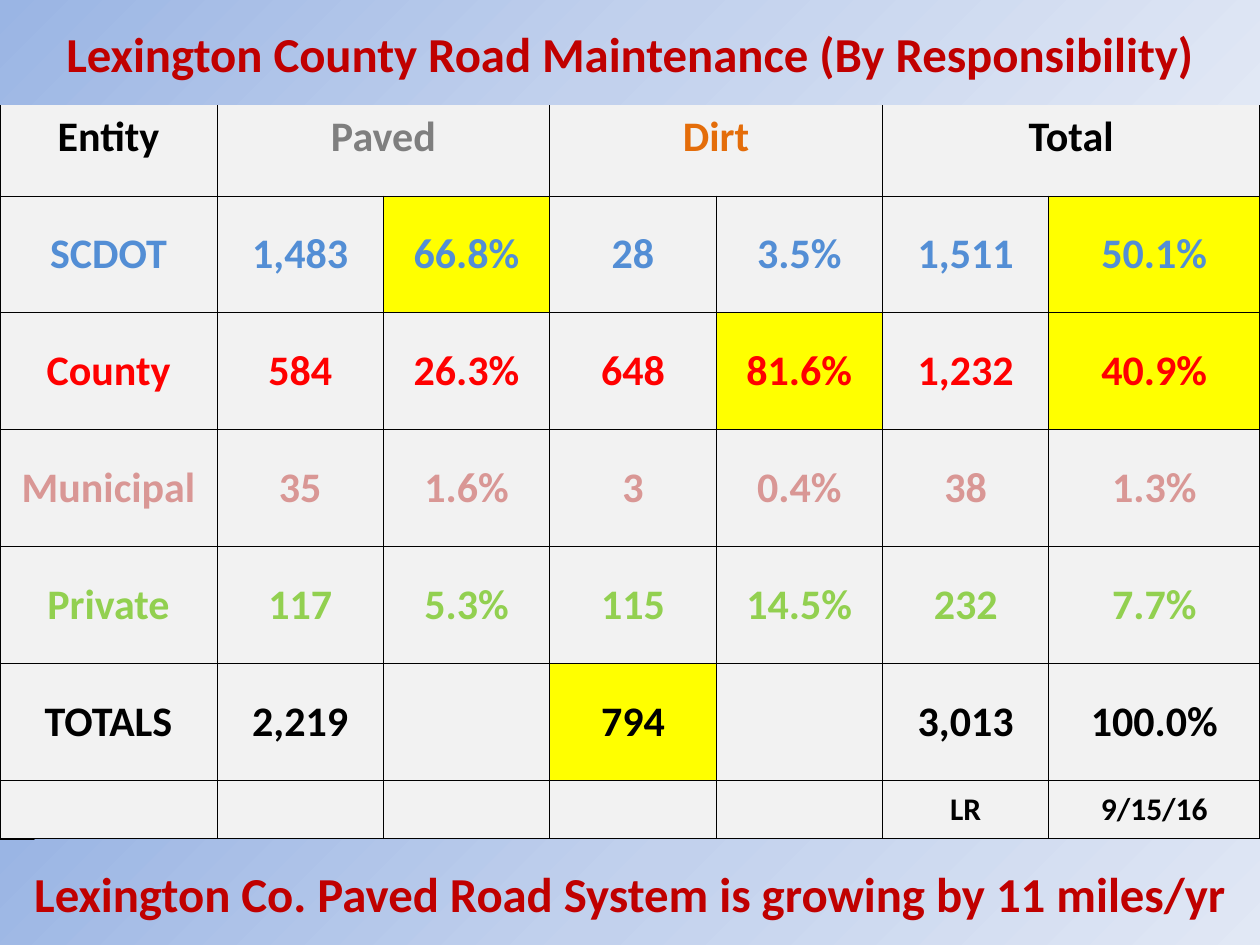
from dataclasses import dataclass

from lxml import etree
from pptx import Presentation
from pptx.dml.color import RGBColor
from pptx.enum.shapes import MSO_SHAPE
from pptx.enum.text import MSO_ANCHOR, PP_ALIGN
from pptx.oxml import parse_xml
from pptx.oxml.ns import qn
from pptx.slide import Slide
from pptx.table import _Cell
from pptx.text.text import TextFrame
from pptx.util import Pt

CENTER = PP_ALIGN.CENTER
MIDDLE = MSO_ANCHOR.MIDDLE
RECTANGLE = MSO_SHAPE.RECTANGLE
DRAWING_NS = "http://schemas.openxmlformats.org/drawingml/2006/main"


@dataclass(frozen=True)
class Theme:
    font: str = "Calibri"
    banner_size: float = 27.9
    table_size: float = 24
    credit_size: float = 18
    banner_text: str = "C00000"
    banner_stops: tuple[str, ...] = ("9AB5E4", "C2D1ED", "E1E8F5")
    cell: str = "F2F2F2"
    highlight: str = "FFFF00"
    black: str = "000000"
    paved: str = "7F7F7F"
    dirt: str = "E46D0A"
    state: str = "538ED5"
    county: str = "FF0000"
    municipal: str = "D99795"
    private: str = "92D050"
    inner_border: float = 0.5
    outer_border: float = 1


THEME = Theme()


@dataclass(frozen=True)
class Banner:
    text: str
    top: float


@dataclass(frozen=True)
class RoadRow:
    values: tuple[str, ...]
    color: str
    highlighted: tuple[int, ...] = ()
    size: float = THEME.table_size


SLIDE_WIDTH, SLIDE_HEIGHT = 720, 540
BANNER_HEIGHT = 60
BANNERS = (
    Banner("Lexington County Road Maintenance (By Responsibility)", 0),
    Banner("Lexington Co. Paved Road System is growing by 11 miles/yr",
           SLIDE_HEIGHT - BANNER_HEIGHT),
)

TABLE_TOP = 45.2
COLUMN_WIDTHS = [124] + [95.1] * 5 + [120.5]
ROW_HEIGHTS = [66.8] * 6 + [33.6]
HEADINGS = (
    (0, "Entity", THEME.black),
    (1, "Paved", THEME.paved),
    (3, "Dirt", THEME.dirt),
    (5, "Total", THEME.black),
)
ROAD_ROWS = (
    RoadRow(("SCDOT", "1,483", "66.8%", "28", "3.5%", "1,511", "50.1%"), THEME.state, (2, 6)),
    RoadRow(("County", "584", "26.3%", "648", "81.6%", "1,232", "40.9%"), THEME.county, (4, 6)),
    RoadRow(("Municipal", "35", "1.6%", "3", "0.4%", "38", "1.3%"), THEME.municipal),
    RoadRow(("Private", "117", "5.3%", "115", "14.5%", "232", "7.7%"), THEME.private),
    RoadRow(("TOTALS", "2,219", "", "794", "", "3,013", "100.0%"), THEME.black, (3,)),
    RoadRow(("", "", "", "", "", "LR", "9/15/16"), THEME.black, size=THEME.credit_size),
)


def write_centered(frame: TextFrame, text: str, size: float, color: str) -> None:
    frame.text = text
    paragraph = frame.paragraphs[0]
    paragraph.alignment = CENTER
    for run in paragraph.runs:
        run.font.name = THEME.font
        run.font.size = Pt(size)
        run.font.bold = True
        run.font.color.rgb = RGBColor.from_string(color)


def write_cell(cell: _Cell, text: str, size: float, color: str) -> None:
    cell.vertical_anchor = MIDDLE
    write_centered(cell.text_frame, text, size, color)


def set_border(cell: _Cell, side: str, width: float) -> None:
    line = etree.SubElement(cell._tc.get_or_add_tcPr(), qn(f"a:ln{side}"), w=str(Pt(width)))
    fill = etree.SubElement(line, qn("a:solidFill"))
    etree.SubElement(fill, qn("a:srgbClr"), val=THEME.black)


def style_cell(cell: _Cell, row: int, column: int, fill: str) -> None:
    cell.margin_left = cell.margin_right = cell.margin_top = cell.margin_bottom = 0
    on_edge = {
        "L": column == 0,
        "R": column == len(COLUMN_WIDTHS) - 1,
        "T": False,
        "B": row == len(ROW_HEIGHTS) - 1,
    }
    for side, is_outer in on_edge.items():
        set_border(cell, side, THEME.outer_border if is_outer else THEME.inner_border)
    cell.fill.solid()
    cell.fill.fore_color.rgb = RGBColor.from_string(fill)


def add_road_table(slide: Slide) -> None:
    table = slide.shapes.add_table(
        len(ROW_HEIGHTS), len(COLUMN_WIDTHS), 0, Pt(TABLE_TOP),
        Pt(sum(COLUMN_WIDTHS)), Pt(sum(ROW_HEIGHTS))).table
    table.first_row = table.horz_banding = False
    for column, width in zip(table.columns, COLUMN_WIDTHS):
        column.width = Pt(width)
    for row, height in zip(table.rows, ROW_HEIGHTS):
        row.height = Pt(height)

    for column in range(len(COLUMN_WIDTHS)):
        style_cell(table.cell(0, column), 0, column, THEME.cell)
    for column, heading, color in HEADINGS:
        cell = table.cell(0, column)
        if column:
            cell.merge(table.cell(0, column + 1))
        write_cell(cell, heading, THEME.table_size, color)

    for row, road in enumerate(ROAD_ROWS, start=1):
        for column, value in enumerate(road.values):
            cell = table.cell(row, column)
            fill = THEME.highlight if column in road.highlighted else THEME.cell
            style_cell(cell, row, column, fill)
            write_cell(cell, value, road.size, road.color)


def add_banner(slide: Slide, banner: Banner) -> None:
    shape = slide.shapes.add_shape(
        RECTANGLE, 0, Pt(banner.top), Pt(SLIDE_WIDTH), Pt(BANNER_HEIGHT))
    shape.shadow.inherit = False
    shape.line.fill.background()
    stops = "".join(
        f'<a:gs pos="{index * 50000}"><a:srgbClr val="{color}"/></a:gs>'
        for index, color in enumerate(THEME.banner_stops))
    gradient = parse_xml(
        f'<a:gradFill xmlns:a="{DRAWING_NS}" rotWithShape="1"><a:gsLst>{stops}</a:gsLst>'
        '<a:lin ang="2700000" scaled="0"/></a:gradFill>')
    shape._element.spPr.find(qn("a:prstGeom")).addnext(gradient)
    shape.text_frame.word_wrap = True
    shape.text_frame.vertical_anchor = MIDDLE
    write_centered(shape.text_frame, banner.text, THEME.banner_size, THEME.banner_text)


def main() -> None:
    presentation = Presentation()
    presentation.slide_width = Pt(SLIDE_WIDTH)
    presentation.slide_height = Pt(SLIDE_HEIGHT)
    slide = presentation.slides.add_slide(presentation.slide_layouts[6])
    add_road_table(slide)
    for banner in BANNERS:
        add_banner(slide, banner)
    presentation.save("out.pptx")


if __name__ == "__main__":
    main()
